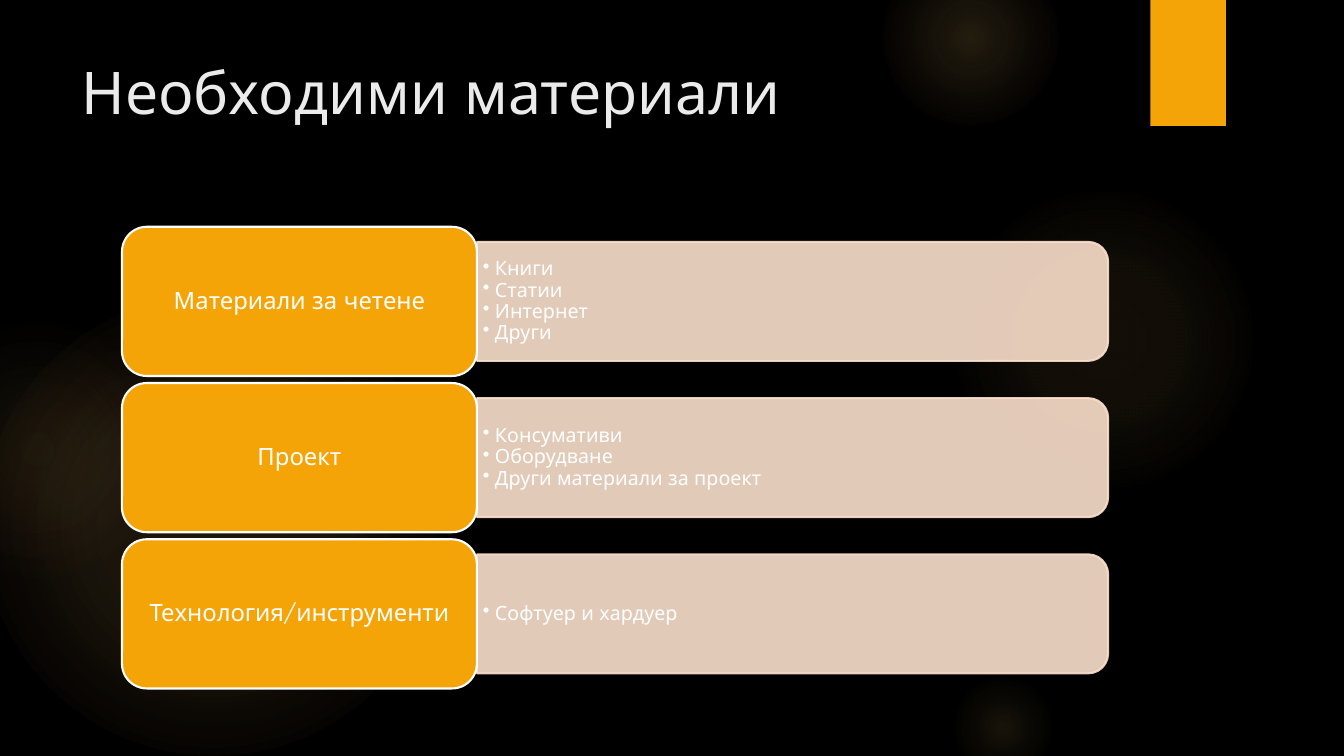
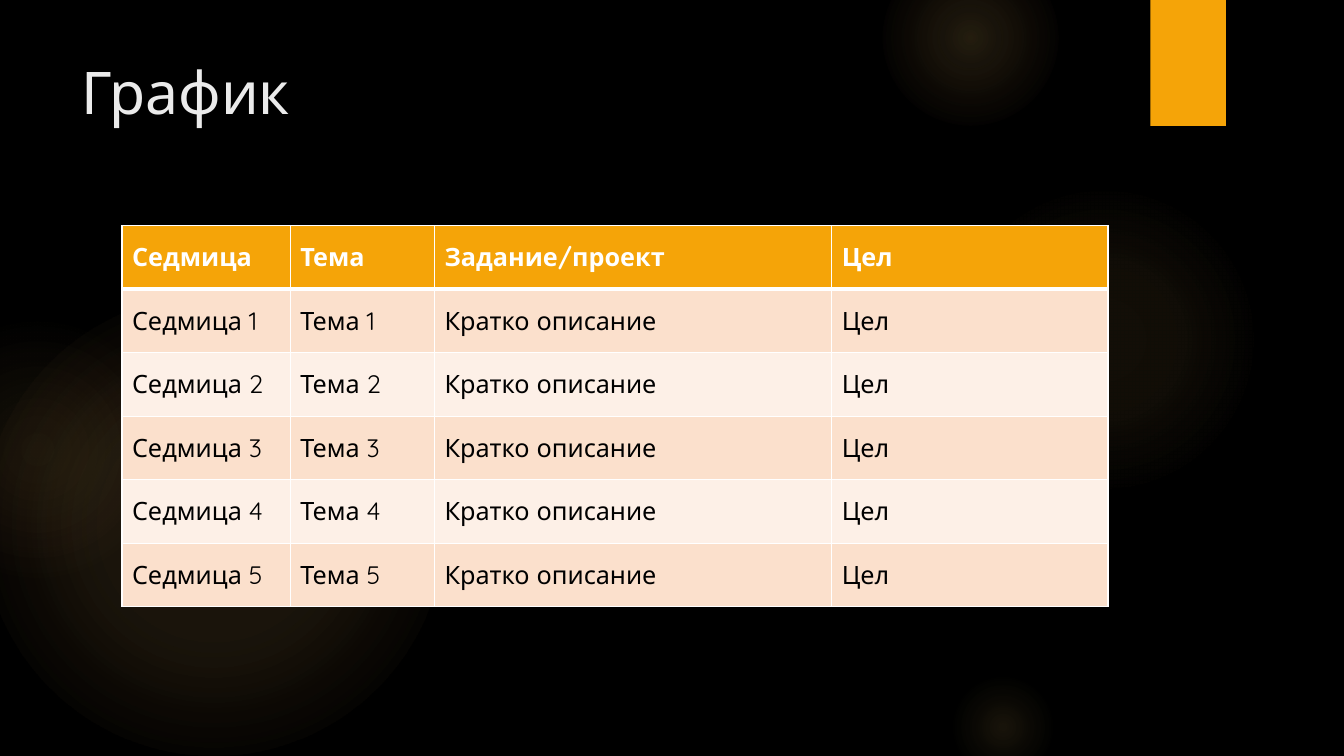
import pptx
import pptx.util
import pptx.dml.color
import pptx.enum.shapes
import pptx.enum.text
import pptx.oxml
import pptx.oxml.ns

Inches = pptx.util.Inches
Pt = pptx.util.Pt
PRESET = pptx.enum.shapes.MSO_SHAPE
ALIGN = pptx.enum.text.PP_ALIGN
ANCHOR = pptx.enum.text.MSO_ANCHOR

COLORS = {
    "night": "000000", "white": "FFFFFF", "title": "EBEBEB", "orange": "F5A408",
    "peach": "FBE0CC", "cream": "FDF0E7", "glow": "FAC96A", "ember": "F59B74",
}

# left, top, diameter, then gradient stops: position %, colour, opacity %
GLOWS = [
    (-0.17, 2.92, 4.58, [(0, "glow", 11), (36, "glow", 10), (75, "glow", 0)]),
    (-0.92, 3.17, 2.58, [(0, "glow", 8), (36, "glow", 5), (71, "ember", 0)]),
    (9.41, 1.83, 3.08, [(0, "glow", 7), (36, "glow", 6), (69, "glow", 0)]),
    (8.75, -0.5, 1.75, [(0, "glow", 14), (36, "glow", 7), (73, "glow", 0)]),
    (9.41, 6.67, 1.08, [(0, "glow", 10), (31, "glow", 5), (66, "glow", 0)]),
]


def rgb(name):
    return pptx.dml.color.RGBColor.from_string(COLORS[name])


def xml(tag, attributes, content=""):
    namespace = pptx.oxml.ns.nsdecls("a")
    return pptx.oxml.parse_xml(f"<a:{tag} {namespace} {attributes}>{content}</a:{tag}>")


class Designer:
    """Holds the deck style and the page being drawn."""

    font = "Quicksand"

    def __init__(self):
        self.deck = pptx.Presentation()
        self.deck.slide_width = Inches(13.33)
        self.deck.slide_height = Inches(7.5)
        background = self.deck.slide_master.background.fill
        background.solid()
        background.fore_color.rgb = rgb("night")
        self.page = None

    def start_page(self, title):
        self.page = self.deck.slides.add_slide(self.deck.slide_layouts[6])
        for left, top, size, stops in GLOWS:
            self.glow(left, top, size, stops)
        self.shape(PRESET.RECTANGLE, 11.41, 0, 0.75, 1.25, "orange")
        frame = self.text_box(0.71, 0.5, 10.29, 1.53)
        self.add_text(frame.paragraphs[0], title, 42, "title")

    def shape(self, preset, left, top, width, height, fill=None, line=None):
        shape = self.page.shapes.add_shape(
            preset, Inches(left), Inches(top), Inches(width), Inches(height))
        shape.shadow.inherit = False
        if fill:
            shape.fill.solid()
            shape.fill.fore_color.rgb = rgb(fill)
        else:
            shape.fill.background()
        if line:
            shape.line.color.rgb = rgb(line)
            shape.line.width = Pt(1.5)
        else:
            shape.line.fill.background()
        return shape

    def glow(self, left, top, size, stops):
        properties = self.shape(PRESET.OVAL, left, top, size, size)._element.spPr
        marks = "".join(
            f'<a:gs pos="{position * 1000}"><a:srgbClr val="{COLORS[color]}">'
            f'<a:alpha val="{opacity * 1000}"/></a:srgbClr></a:gs>'
            for position, color, opacity in stops)
        center = '<a:fillToRect l="50000" t="50000" r="50000" b="50000"/>'
        gradient = xml("gradFill", 'rotWithShape="1"',
                       f'<a:gsLst>{marks}</a:gsLst><a:path path="circle">{center}</a:path>')
        properties.replace(properties.find(pptx.oxml.ns.qn("a:noFill")), gradient)

    def set_frame(self, frame, anchor, side, edge):
        frame.word_wrap = True
        frame.vertical_anchor = anchor
        frame.margin_left = frame.margin_right = Inches(side)
        frame.margin_top = frame.margin_bottom = Inches(edge)
        return frame

    def text_box(self, left, top, width, height, anchor=ANCHOR.TOP, side=0.1, edge=0.05):
        box = self.page.shapes.add_textbox(
            Inches(left), Inches(top), Inches(width), Inches(height))
        return self.set_frame(box.text_frame, anchor, side, edge)

    def add_text(self, para, text, size, color, bold=False):
        span = para.add_run()
        span.text = text
        span.font.name = self.font
        span.font.size = Pt(size)
        span.font.bold = bold
        span.font.color.rgb = rgb(color)

    def bar(self, left, top, width, height):
        """A translucent bar, rounded on its right: a turned upright shape."""
        bar = self.shape(PRESET.ROUND_2_SAME_RECTANGLE, left + (width - height) / 2,
                         top + (height - width) / 2, height, width, "peach", "peach")
        bar.rotation = 90
        for color in bar._element.spPr.iter(pptx.oxml.ns.qn("a:srgbClr")):
            color.append(xml("alpha", 'val="90000"'))

    def label(self, text, left, top, width, height):
        label = self.shape(PRESET.ROUNDED_RECTANGLE, left, top, width, height,
                           "orange", "white")
        frame = self.set_frame(label.text_frame, ANCHOR.MIDDLE, 0.07, 0.04)
        para = frame.paragraphs[0]
        para.alignment = ALIGN.CENTER
        para.line_spacing = 0.9
        self.add_text(para, text, 17, "white")

    def bullets(self, items, left, top, width, height):
        frame = self.text_box(left, top, width, height, ANCHOR.MIDDLE, 0.06, 0.03)
        for index, item in enumerate(items):
            para = frame.add_paragraph() if index else frame.paragraphs[0]
            para.line_spacing = 0.9
            properties = para._p.get_or_add_pPr()
            properties.set("marL", str(Inches(0.12)))
            properties.set("indent", str(Inches(-0.12)))
            properties.append(xml("buChar", 'char="•"'))
            self.add_text(para, item, 14, "white")

    def table(self, rows, left, top, widths, row_height):
        table = self.page.shapes.add_table(
            len(rows), len(widths), Inches(left), Inches(top),
            Inches(sum(widths)), Inches(row_height * len(rows))).table
        for column, width in zip(table.columns, widths):
            column.width = Inches(width)
        for row_index, row in enumerate(rows):
            table.rows[row_index].height = Inches(row_height)
            header = row_index == 0
            fill = "orange" if header else ("cream", "peach")[row_index % 2]
            for column_index, text in enumerate(row):
                cell = table.cell(row_index, column_index)
                cell.vertical_anchor = ANCHOR.MIDDLE
                self.cell_borders(cell, top=3 if row_index == 1 else 1,
                                  bottom=3 if header else 1)
                cell.fill.solid()
                cell.fill.fore_color.rgb = rgb(fill)
                self.add_text(cell.text_frame.paragraphs[0], text, 18,
                              "white" if header else "night", header)

    def cell_borders(self, cell, top, bottom):
        properties = cell._tc.get_or_add_tcPr()
        paint = f'<a:solidFill><a:srgbClr val="{COLORS["white"]}"/></a:solidFill>'
        for side, width in (("L", 1), ("R", 1), ("T", top), ("B", bottom)):
            properties.append(xml(f"ln{side}", f'w="{Pt(width)}"', paint))


def main():
    designer = Designer()

    # Materials: a label and a bulleted bar for each group
    designer.start_page("Необходими материали")
    groups = [
        ("Материали за четене", ["Книги", "Статии", "Интернет", "Други"]),
        ("Проект", ["Консумативи", "Оборудване", "Други материали за проект"]),
        ("Технология/инструменти", ["Софтуер и хардуер"]),
    ]
    left, first_top, pitch = 1.21, 2.25, 1.55
    label_width, label_height, bar_width, bar_height = 3.52, 1.48, 6.26, 1.18
    bar_left = left + label_width
    for index, (name, items) in enumerate(groups):
        top = first_top + index * pitch
        bar_top = top + (label_height - bar_height) / 2
        designer.bar(bar_left, bar_top, bar_width, bar_height)
        designer.bullets(items, bar_left, bar_top, bar_width, bar_height)
        designer.label(name, left, top, label_width, label_height)

    # Schedule: one row for each week
    designer.start_page("График")
    weeks = [(f"Седмица {week}", f"Тема {week}", "Кратко описание", "Цел")
             for week in range(1, 6)]
    designer.table([("Седмица", "Тема", "Задание/проект", "Цел")] + weeks,
                   1.21, 2.24, [1.67, 1.43, 3.94, 2.74], 0.63)

    designer.deck.save("out.pptx")


if __name__ == "__main__":
    main()
